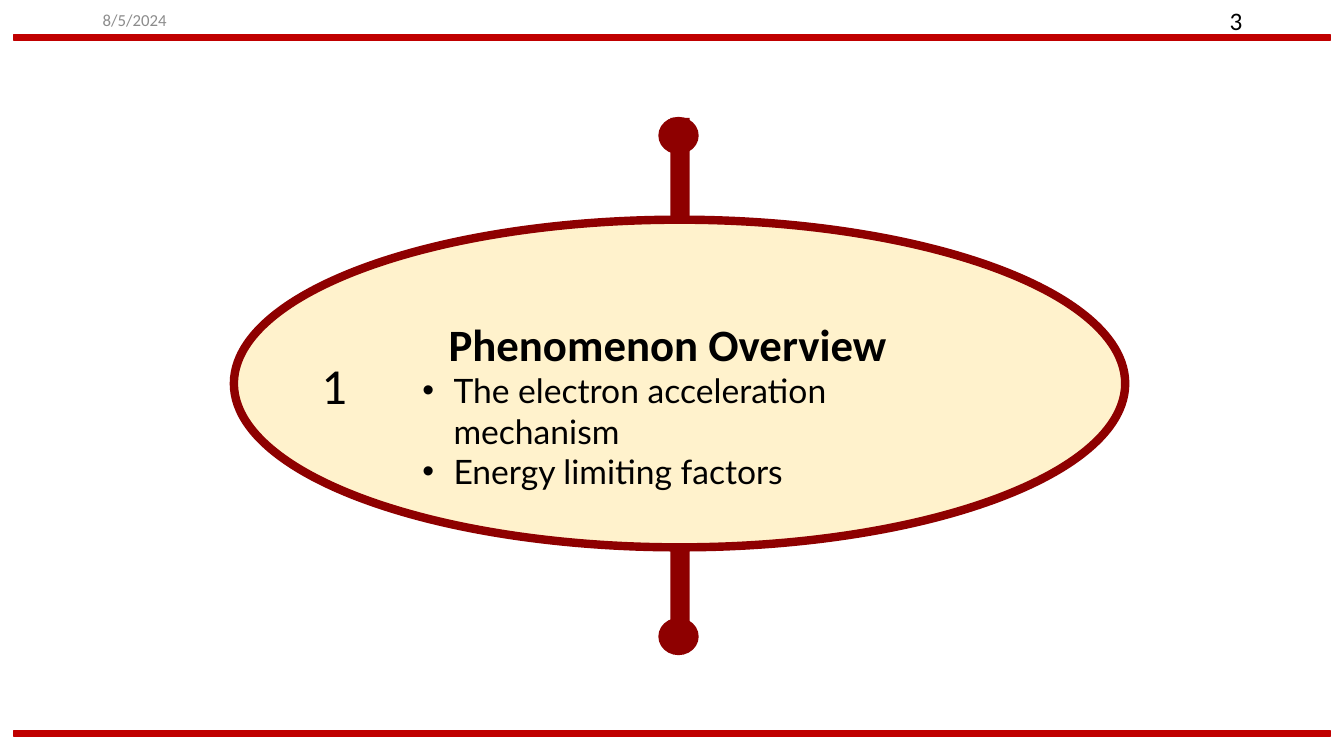
from lxml import etree
from pptx import Presentation
from pptx import util as u
from pptx.dml.color import RGBColor
from pptx.enum import shapes, text
from pptx.oxml.ns import qn

RED, MAROON, CREAM = "C00000", "8E0000", "FFF2CC"
RECT, OVAL = shapes.MSO_SHAPE.RECTANGLE, shapes.MSO_SHAPE.OVAL
LEFT, RIGHT = text.PP_ALIGN.LEFT, text.PP_ALIGN.RIGHT
TOP, MIDDLE = text.MSO_ANCHOR.TOP, text.MSO_ANCHOR.MIDDLE


def rgb(value):
    return RGBColor.from_string(value)


prs = Presentation()
prs.slide_width, prs.slide_height = u.Inches(13.33), u.Inches(7.5)
s = prs.slides.add_slide(prs.slide_layouts[6])

for kind, box, fill, line, width in [
    (RECT, (0.14, 0.34, 13.05, 0.06), RED, RED, 1),
    (RECT, (0.14, 7.25, 13.05, 0.06), RED, RED, 1),
    (RECT, (6.65, 1.17, 0.19, 5.27), MAROON, None, 0),
    (OVAL, (6.53, 1.16, 0.4, 0.37), MAROON, None, 0),
    (OVAL, (6.53, 6.13, 0.4, 0.37), MAROON, None, 0),
    (OVAL, (2.32, 2.18, 8.84, 3.25), CREAM, MAROON, 6),
]:
    sp = s.shapes.add_shape(kind, *map(u.Inches, box))
    sp.shadow.inherit = False
    sp.fill.solid()
    sp.fill.fore_color.rgb = rgb(fill)
    if line:
        sp.line.color.rgb = rgb(line)
        sp.line.width = u.Pt(width)
    else:
        sp.line.fill.background()

small = dict(name="Calibri", size=u.Pt(12))
number = dict(name="Calibri", size=u.Pt(18))
section = dict(name="Calibri", size=u.Pt(36))
title = dict(name="Calibri", size=u.Pt(32), bold=True)
item = dict(name="Lato", size=u.Pt(24))

for box, wrap, anchor, align, color, paragraphs in [
    ((0.92, 0, 3, 0.4), True, MIDDLE, LEFT, "8C8C8C", [("8/5/2024", small, 0, False)]),
    ((9.42, 0, 3, 0.4), True, MIDDLE, RIGHT, "000000", [("3", number, 0, False)]),
    ((3.09, 3.46, 0.46, 0.71), False, TOP, LEFT, "000000", [("1", section, 0, False)]),
    ((4.09, 3.09, 5.82, 1.45), True, TOP, LEFT, "000000", [
        ("Phenomenon Overview", title, 0.26, False),
        ("The electron acceleration mechanism", item, 0.31, True),
        ("Energy limiting factors", item, 0.31, True),
    ]),
]:
    tf = s.shapes.add_textbox(*map(u.Inches, box)).text_frame
    tf.word_wrap = wrap
    tf.vertical_anchor = anchor
    for i, (words, style, indent, bullet) in enumerate(paragraphs):
        p = tf.add_paragraph() if i else tf.paragraphs[0]
        p.alignment = align
        pPr = p._p.get_or_add_pPr()
        pPr.set("marL", str(u.Inches(indent)))
        if bullet:
            pPr.set("indent", str(-u.Inches(indent)))
            etree.SubElement(pPr, qn("a:buFont"), typeface="Arial")
            etree.SubElement(pPr, qn("a:buChar"), char="•")
        r = p.add_run()
        r.text = words
        r.font.color.rgb = rgb(color)
        for key, value in style.items():
            setattr(r.font, key, value)

prs.save("out.pptx")
